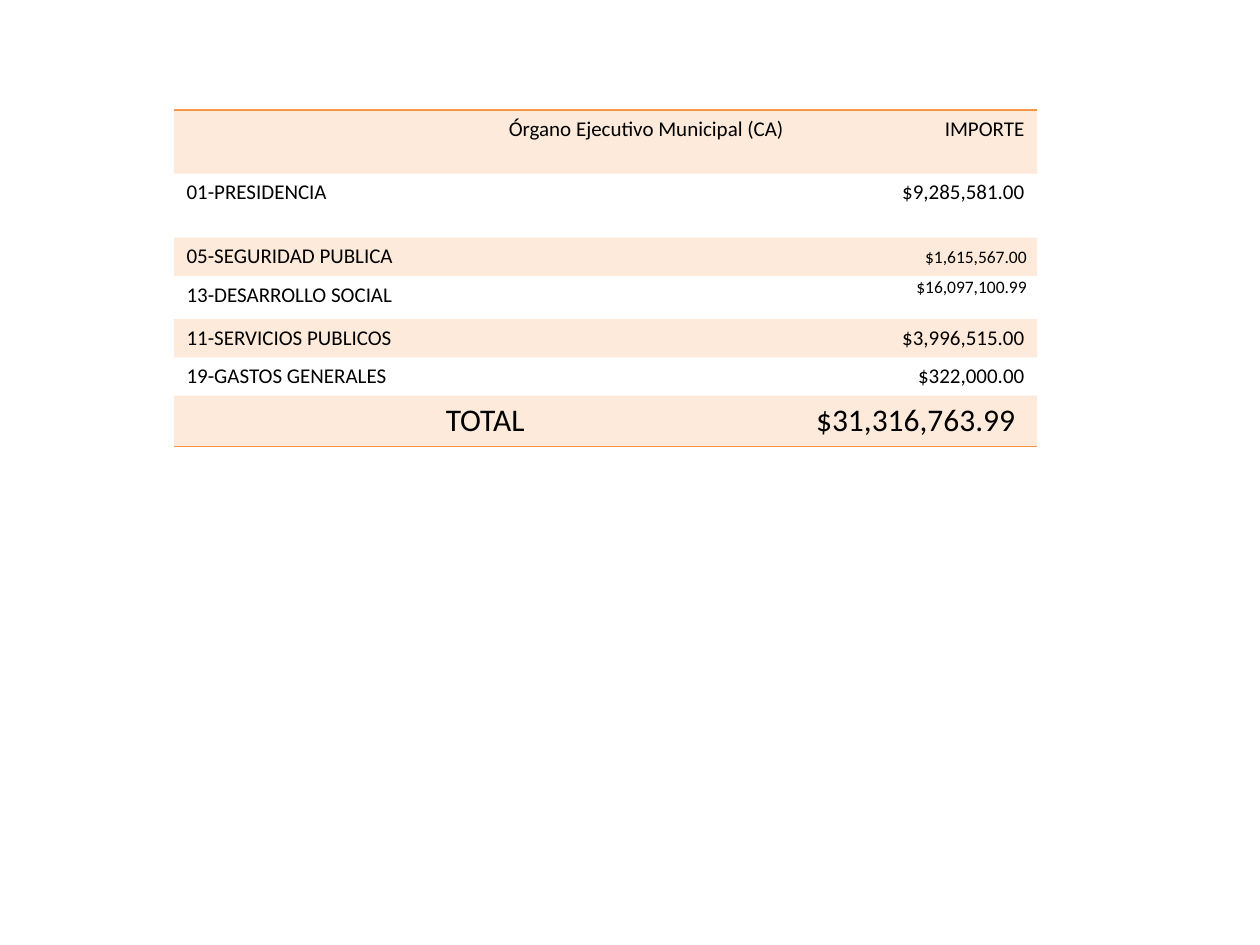
import pptx
import pptx.util
import pptx.dml.color
import pptx.enum.text
import pptx.oxml.ns
from lxml import etree

Pt = pptx.util.Pt
ALIGN = pptx.enum.text.PP_ALIGN
ANCHOR = pptx.enum.text.MSO_ANCHOR
ORANGE = pptx.dml.color.RGBColor(0xF7, 0x96, 0x46)
BLACK = pptx.dml.color.RGBColor(0, 0, 0)
qn = pptx.oxml.ns.qn
NO_STYLE = "{2D5ABB26-0587-4C30-8999-92F81FD0307C}"


def add_border(cell, side):
    """Draw a 1 pt orange line; call before the cell gets its fill."""
    ln = etree.SubElement(cell._tc.get_or_add_tcPr(), qn("a:" + side), w=str(Pt(1)))
    fill = etree.SubElement(ln, qn("a:solidFill"))
    etree.SubElement(fill, qn("a:srgbClr"), val=str(ORANGE))


prs = pptx.Presentation()
prs.slide_width, prs.slide_height = Pt(720), Pt(540)
s = prs.slides.add_slide(prs.slide_layouts[6])

# Budget lines: label, amount, row height
rows = [
    ("Órgano Ejecutivo Municipal (CA)", "IMPORTE", 36.5),
    ("01-PRESIDENCIA", "$9,285,581.00", 36.5),
    ("05-SEGURIDAD PUBLICA", "$1,615,567.00", 21.85),
    ("13-DESARROLLO SOCIAL", "$16,097,100.99", 24.8),
    ("11-SERVICIOS PUBLICOS", "$3,996,515.00", 21.85),
    ("19-GASTOS GENERALES", "$322,000.00", 21.85),
    ("TOTAL", " $31,316,763.99", 29.2),
]
last = len(rows) - 1
small_amounts = {2: ANCHOR.MIDDLE, 3: ANCHOR.TOP}

# Table without a built-in style
height = sum(row[2] for row in rows)
frame = s.shapes.add_table(len(rows), 2, Pt(99.4), Pt(62.8), Pt(493.2), Pt(height))
table = frame.table
table.first_row = table.horz_banding = False
table._tbl.tblPr.find(qn("a:tableStyleId")).text = NO_STYLE
table.columns[0].width, table.columns[1].width = Pt(355.7), Pt(137.5)

for i, (label, amount, row_height) in enumerate(rows):
    table.rows[i].height = Pt(row_height)
    for j, text in enumerate((label, amount)):
        cell = table.cell(i, j)

        # Text
        cell.text_frame.text = text
        p = cell.text_frame.paragraphs[0]
        p.alignment = ALIGN.RIGHT if j == 1 or i == 0 else ALIGN.LEFT
        if i == last:
            p.alignment = ALIGN.LEFT if j == 1 else ALIGN.CENTER
        font = p.runs[0].font
        font.name, font.size = "Calibri", Pt(18 if i == last else 12)
        font.color.rgb = BLACK
        if j == 1 and i in small_amounts:
            font.size = Pt(10)
            cell.vertical_anchor = small_amounts[i]
            cell.margin_left = cell.margin_top = Pt(0.7)
            cell.margin_right, cell.margin_bottom = Pt(6), Pt(0)

        # Outer rules and banding
        if i == 0:
            add_border(cell, "lnT")
        if i == last:
            add_border(cell, "lnB")
        if i % 2 == 0:
            cell.fill.solid()
            cell.fill.fore_color.rgb = ORANGE
            color = cell._tc.tcPr.find(qn("a:solidFill")).find(qn("a:srgbClr"))
            etree.SubElement(color, qn("a:alpha"), val="20000")
        else:
            cell.fill.background()

prs.save("out.pptx")
